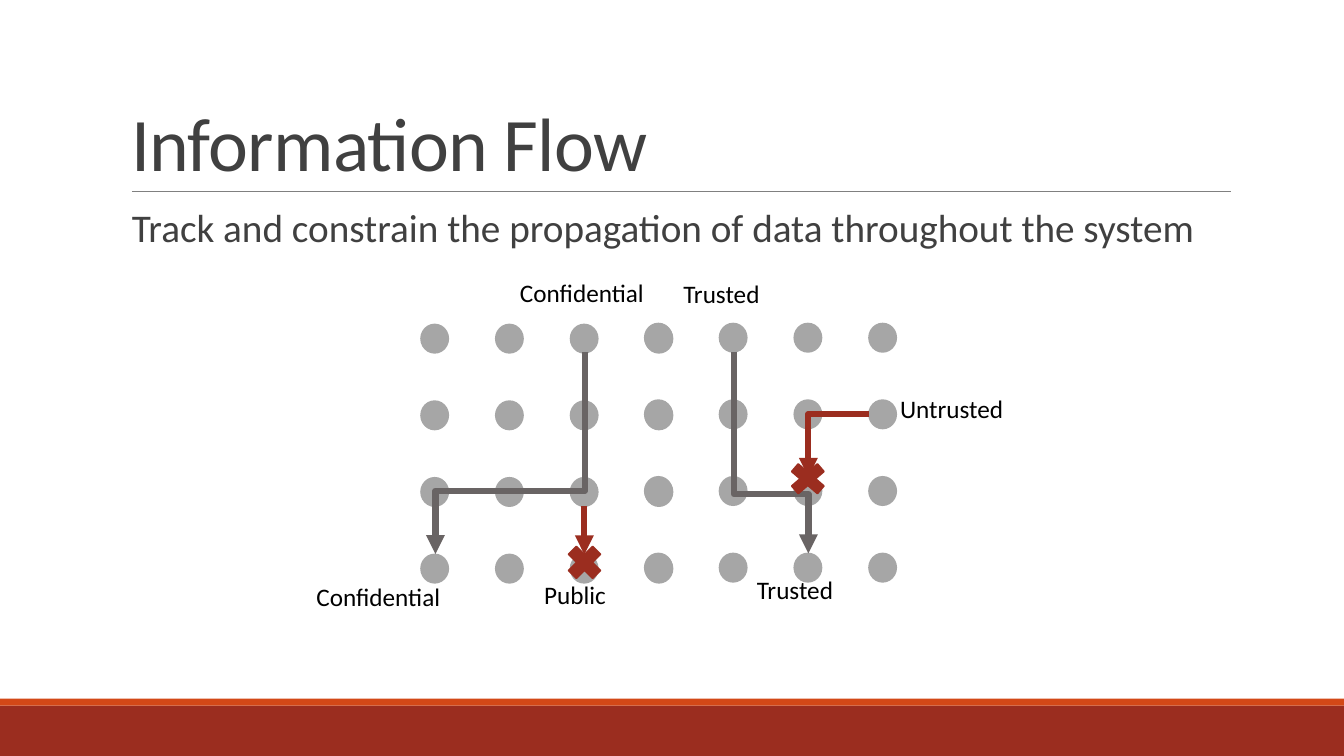
"""Build the Information Flow slide."""
from lxml import etree
from pptx import Presentation
from pptx.dml.color import RGBColor
from pptx.enum import shapes as sh, text as tx
from pptx.oxml import ns
from pptx.util import Pt

TITLE = "Information Flow"
BODY = "Track and constrain the propagation of data throughout the system"
FONT = "Calibri"
HUE = {"red": "9B2D1F", "orange": "D34817", "rule": "808080", "ink": "404040",
       "black": "000000", "dot": "A6A6A6", "flow": "696464"}
SIZE = (960, 540)
BARS = [("red", 0, 504, 960, 36), ("orange", 0, 499, 960, 5)]
RULE = (94.3, 136.8, 879.1, 136.8)
BLOCKS = [(300.8, 231.8), (460.6, 231.1)]
SIDE = 4
STEP = (53.4, 54.75)
DOT = (19.4, 20.2)
BENDS = [
    ("bentConnector3", "flow", (292.3, 270.4, 144, 106.7), {"rot": "5400000"}, 68600),
    ("bentConnector3", "flow", (478.8, 296.6, 144, 53.4),
     {"rot": "16200000", "flipH": "1"}, 70500),
    ("bentConnector2", "red", (577.4, 295.9, 43.5, 44.7),
     {"rot": "10800000", "flipV": "1"}, None),
]
DROP = (417.4, 361.4, 417.4, 396)
LABELS = [
    ("Confidential", 218.9, 411.8, 129), ("Public", 381.6, 410.4, 73),
    ("Confidential", 364.3, 194.4, 129), ("Trusted", 481, 195.1, 86),
    ("Untrusted", 635.8, 277.2, 110), ("Trusted", 533.5, 406.8, 86),
]
CROSSES = [(401, 385.2, 33.1, 33.1), (559.4, 326.9, 35.3, 30.2)]


def rgb(name):
    return RGBColor.from_string(HUE[name])


def pts(vals):
    return [Pt(v) for v in vals]


def sub(node, tag, **attrs):
    return etree.SubElement(node, ns.qn(tag), attrs)


def style(par, size, hue):
    for run in par.runs:
        run.font.name = FONT
        run.font.size = Pt(size)
        run.font.color.rgb = rgb(hue)


def shape(kind, box, hue, edge=0):
    item = slide.shapes.add_shape(kind, *pts(box))
    item.shadow.inherit = False
    item.fill.solid()
    item.fill.fore_color.rgb = rgb(hue)
    if edge:
        item.line.color.rgb = rgb(hue)
        item.line.width = Pt(edge)
    else:
        item.line.fill.background()


def link(kind, ends, hue, width, arrow=True):
    item = slide.shapes.add_connector(kind, *pts(ends))
    item.line.color.rgb = rgb(hue)
    item.line.width = Pt(width)
    if arrow:
        sub(item.line._get_or_add_ln(), "a:tailEnd", type="triangle")
    sub(item._element.spPr, "a:effectLst")
    return item


def bend(form, hue, box, turn, adj):
    x, y, w, h = box
    item = link(sh.MSO_CONNECTOR.ELBOW, (x, y, x + w, y + h), hue, 4.5)
    props = item._element.spPr
    for key, val in turn.items():
        props.find(ns.qn("a:xfrm")).set(key, val)
    geom = props.find(ns.qn("a:prstGeom"))
    geom.set("prst", form)
    if adj:
        sub(geom.find(ns.qn("a:avLst")), "a:gd", name="adj1", fmla=f"val {adj}")


def place(item, box, words):
    item.left, item.top, item.width, item.height = pts(box)
    frame = item.text_frame
    frame.text = words
    frame.auto_size = tx.MSO_AUTO_SIZE.NONE
    par = frame.paragraphs[0]
    par.alignment = tx.PP_ALIGN.LEFT
    return frame, par


def label(words, x, y, w):
    box = slide.shapes.add_textbox(*pts((x, y, w, 37.4)))
    box.text_frame.text = words
    box.text_frame.word_wrap = False
    style(box.text_frame.paragraphs[0], 18, "black")


deck = Presentation()
deck.slide_width, deck.slide_height = pts(SIZE)
slide = deck.slides.add_slide(deck.slide_layouts[1])

frame, par = place(slide.shapes.title, (86.4, 22.3, 792, 114.5), TITLE)
frame.vertical_anchor = tx.MSO_ANCHOR.BOTTOM
par.line_spacing = 0.85
style(par, 54, "ink")
par.runs[0].font._element.set("spc", "-50")

frame, par = place(slide.placeholders[1], (86.4, 145.4, 792, 316.8), BODY)
frame.margin_left = frame.margin_right = 0
par.line_spacing = 0.9
par.space_before, par.space_after = pts((12, 2))
style(par, 28, "ink")
props = par._p.get_or_add_pPr()
props.set("marL", str(Pt(7.2)))
props.set("indent", str(Pt(-7.2)))
sub(sub(props, "a:buClr"), "a:srgbClr", val=HUE["orange"])
sub(props, "a:buChar", char=" ")

for hue, *box in BARS:
    shape(sh.MSO_SHAPE.RECTANGLE, box, hue)
link(sh.MSO_CONNECTOR.STRAIGHT, RULE, "rule", 0.5, False)
for x, y in BLOCKS:
    for row in range(SIDE):
        for col in range(SIDE):
            spot = (x + col * STEP[0], y + row * STEP[1])
            shape(sh.MSO_SHAPE.OVAL, spot + DOT, "dot", 1.25)
for item in BENDS:
    bend(*item)
link(sh.MSO_CONNECTOR.STRAIGHT, DROP, "red", 4.5)
for item in LABELS:
    label(*item)
for box in CROSSES:
    shape(sh.MSO_SHAPE.MATH_MULTIPLY, box, "red", 1.25)

deck.save("out.pptx")
